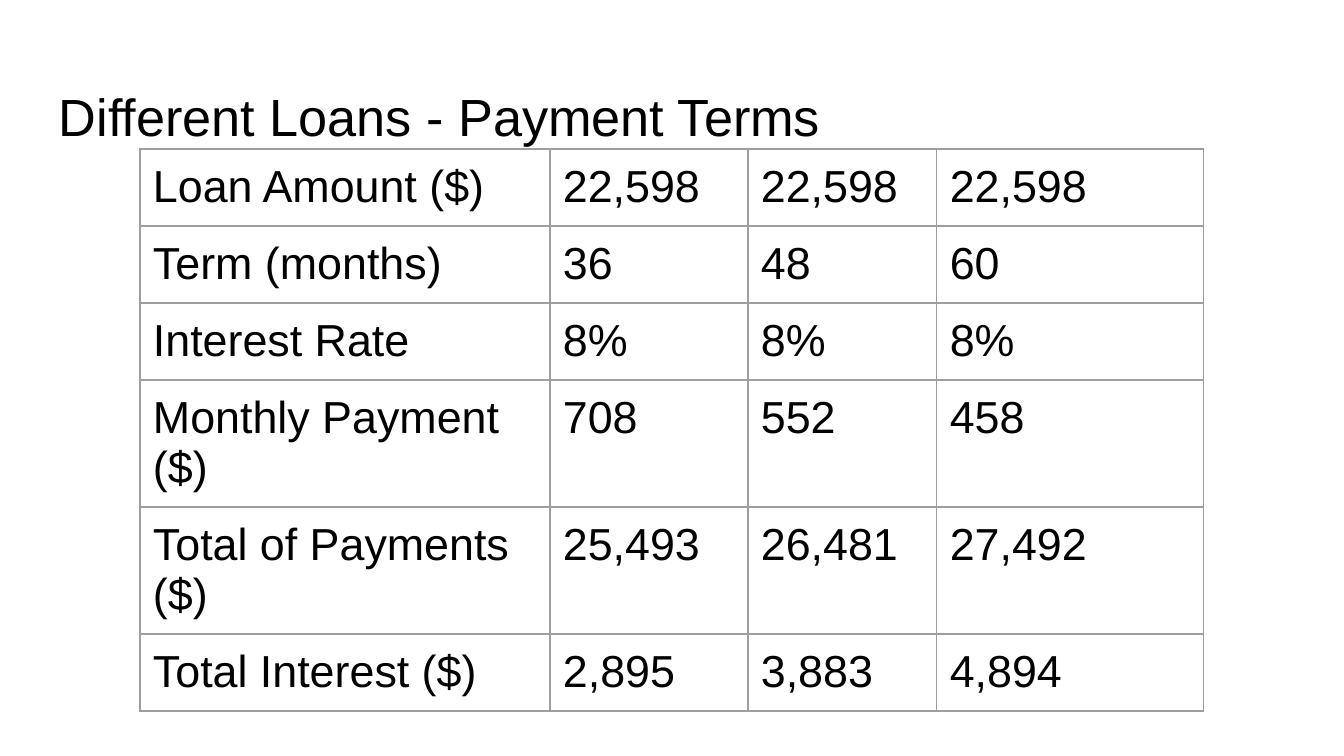
"""Build a slide with a table comparing payment terms of three loans."""
from lxml import etree
from pptx import Presentation
from pptx.dml.color import RGBColor
from pptx.enum.text import MSO_ANCHOR, MSO_AUTO_SIZE, PP_ALIGN
from pptx.oxml.ns import qn
from pptx.util import Pt

TOP = MSO_ANCHOR.TOP
LEFT = PP_ALIGN.LEFT
NO_AUTOFIT = MSO_AUTO_SIZE.NONE

TITLE = "Different Loans - Payment Terms"
ROWS = [
    ("Loan Amount ($)", "22,598", "22,598", "22,598"),
    ("Term (months)", "36", "48", "60"),
    ("Interest Rate", "8%", "8%", "8%"),
    ("Monthly Payment ($)", "708", "552", "458"),
    ("Total of Payments ($)", "25,493", "26,481", "27,492"),
    ("Total Interest ($)", "2,895", "3,883", "4,894"),
]
COL_WIDTHS = [410, 198, 189, 267]
ROW_HEIGHTS = [77, 77, 77, 127, 127, 77]
TITLE_BOX = (46, 66, 1252, 85)
TABLE_LEFT, TABLE_TOP = 140, 149
INSET = 13
FONT, TEXT, BORDER = "Arial", "000000", "9E9E9E"


def px(n):
    """Turn slide pixels into EMU."""
    return round(n * 914400 / 134.4)


def color(value):
    """Turn a hex string into a colour."""
    return RGBColor.from_string(value)


def write(tf, text, size):
    """Put one left-aligned paragraph into a text frame."""
    tf.text = text
    p = tf.paragraphs[0]
    p.alignment = LEFT
    p.font.name = FONT
    p.font.size = Pt(size)
    p.font.color.rgb = color(TEXT)


def add_borders(cell):
    """Draw a thin line on all four sides of a cell."""
    tc_pr = cell._tc.get_or_add_tcPr()
    for i, side in enumerate(("a:lnL", "a:lnR", "a:lnT", "a:lnB")):
        ln = etree.Element(qn(side), w=str(Pt(0.75)))
        fill = etree.SubElement(ln, qn("a:solidFill"))
        etree.SubElement(fill, qn("a:srgbClr"), val=BORDER)
        tc_pr.insert(i, ln)


def add_title(s):
    """Place and format the title placeholder."""
    sp = s.shapes.title
    sp.left, sp.top, sp.width, sp.height = map(px, TITLE_BOX)
    tf = sp.text_frame
    tf.word_wrap = True
    tf.auto_size = NO_AUTOFIT
    tf.vertical_anchor = TOP
    tf.margin_left = tf.margin_right = px(INSET)
    tf.margin_top, tf.margin_bottom = px(18), 0
    write(tf, TITLE, 28)


def add_loan_table(s):
    """Add the loan table with plain bordered cells."""
    frame = s.shapes.add_table(
        len(ROWS), len(COL_WIDTHS), px(TABLE_LEFT), px(TABLE_TOP),
        px(sum(COL_WIDTHS)), px(sum(ROW_HEIGHTS)))
    table = frame.table
    table.first_row = table.horz_banding = False
    for column, width in zip(table.columns, COL_WIDTHS):
        column.width = px(width)
    for row, height, values in zip(table.rows, ROW_HEIGHTS, ROWS):
        row.height = px(height)
        for cell, value in zip(row.cells, values):
            cell.margin_left = cell.margin_right = px(INSET)
            cell.margin_top = cell.margin_bottom = px(INSET)
            cell.vertical_anchor = TOP
            cell.fill.background()
            add_borders(cell)
            write(cell.text_frame, value, 24)


def main():
    """Build and save the slide."""
    prs = Presentation()
    prs.slide_width, prs.slide_height = px(1344), px(756)
    s = prs.slides.add_slide(prs.slide_layouts[5])
    add_title(s)
    add_loan_table(s)
    prs.save("out.pptx")


if __name__ == "__main__":
    main()
